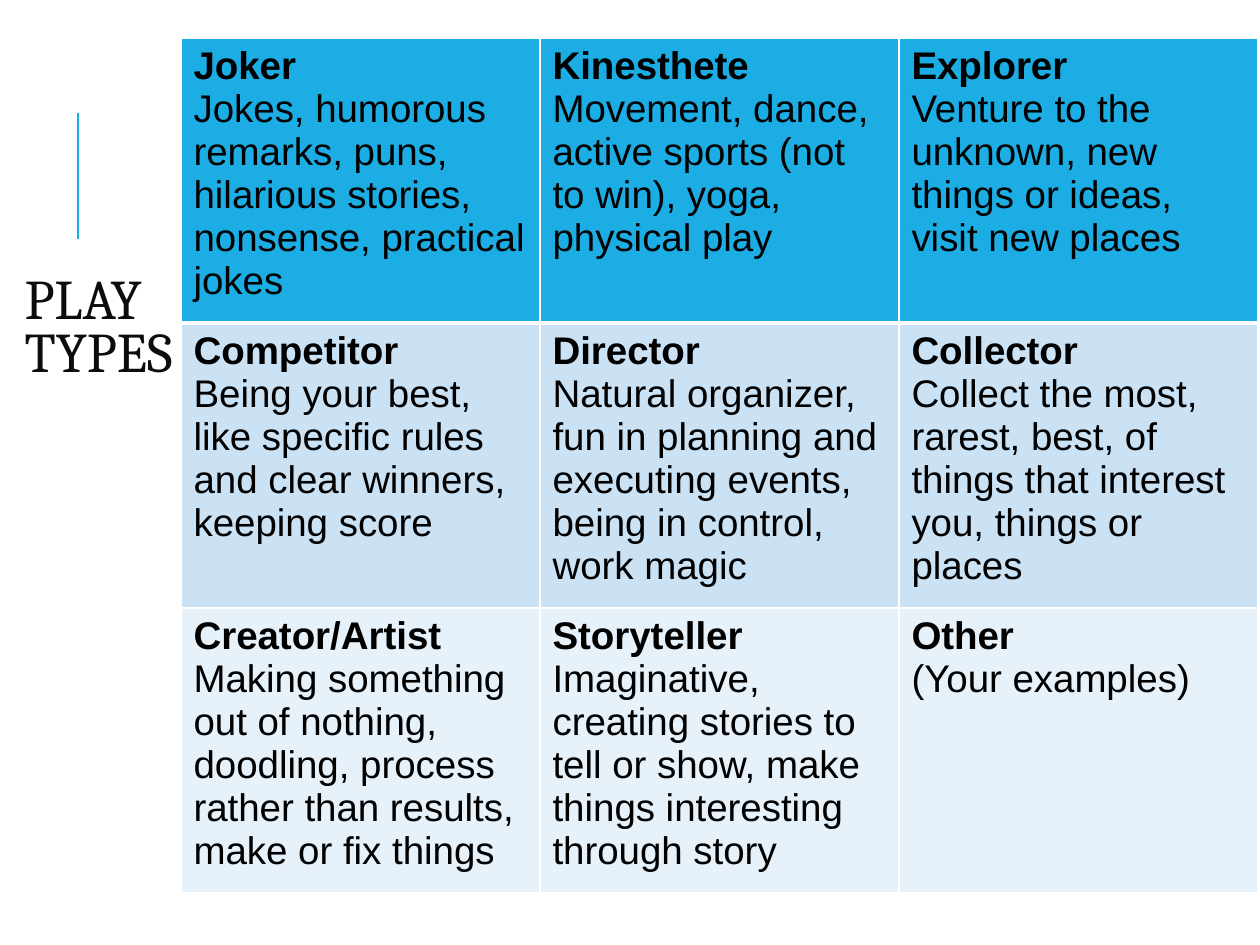
from lxml.etree import SubElement
from pptx import Presentation
from pptx.dml.color import RGBColor
from pptx.enum.shapes import MSO_CONNECTOR
from pptx.enum.text import MSO_ANCHOR, MSO_AUTO_SIZE, PP_ALIGN
from pptx.oxml.ns import qn
from pptx.util import Emu, Pt

TITLE = "PLAY\vTYPES"
PLAY_TYPES = [
    [
        ("Joker", "Jokes, humorous remarks, puns, hilarious stories, nonsense, practical jokes"),
        ("Kinesthete", "Movement, dance, active sports (not to win), yoga, physical play"),
        ("Explorer", "Venture to the unknown, new things or ideas, visit new places"),
    ],
    [
        ("Competitor", "Being your best, like specific rules and clear winners, keeping score"),
        ("Director", "Natural organizer, fun in planning and executing events, being in control, work magic"),
        ("Collector", "Collect the most, rarest, best, of things that interest you, things or places"),
    ],
    [
        ("Creator/Artist", "Making something out of nothing, doodling, process rather than results, make or fix things"),
        ("Storyteller", "Imaginative, creating stories to tell or show, make things interesting through story"),
        ("Other", "(Your examples)"),
    ],
]
ROW_FILLS = ["1CADE4", "CBE2F5", "E7F1FA"]
ACCENT, WHITE, BLACK, TITLE_COLOR = "1CADE4", "FFFFFF", "000000", "0C0C0C"

SLIDE_SIZE = (1260, 945)
TITLE_BOX = (12, 156, 265, 348)
ACCENT_LINE = (78, 239, 78, 113)
TABLE_LEFT, TABLE_TOP = 181, 38
COLUMN_WIDTH, ROW_HEIGHT = 359, 285
THIN, THICK = 1, 3


def px(value):
    return Emu(round(value * 914400 / 126))


def color(value):
    return RGBColor.from_string(value)


def format_font(font, size, name, font_color, bold=False):
    for attribute, value in {"size": Pt(size), "name": name, "bold": bold}.items():
        setattr(font, attribute, value)
    font.color.rgb = color(font_color)


def add_borders(cell, widths):
    properties = cell._tc.get_or_add_tcPr()
    for side, width in widths.items():
        border = SubElement(properties, qn(f"a:ln{side}"), w=str(Pt(width)))
        fill = SubElement(border, qn("a:solidFill"))
        SubElement(fill, qn("a:srgbClr"), val=WHITE)


def add_title(slide):
    title = slide.shapes.title
    for attribute, value in zip(("left", "top", "width", "height"), TITLE_BOX):
        setattr(title, attribute, px(value))
    frame = title.text_frame
    settings = {
        "text": TITLE,
        "word_wrap": True,
        "auto_size": MSO_AUTO_SIZE.NONE,
        "vertical_anchor": MSO_ANCHOR.MIDDLE,
    }
    for attribute, value in settings.items():
        setattr(frame, attribute, value)
    paragraph = frame.paragraphs[0]
    paragraph.alignment = PP_ALIGN.LEFT
    paragraph.line_spacing = 0.8
    for run in paragraph.runs:
        format_font(run.font, 32, "Cambria", TITLE_COLOR)


def add_accent_line(slide):
    line = slide.shapes.add_connector(MSO_CONNECTOR.STRAIGHT, *map(px, ACCENT_LINE))
    line.line.color.rgb = color(ACCENT)
    line.line.width = Pt(1.5)
    SubElement(line._element.spPr, qn("a:effectLst"))


def fill_cell(cell, texts, row_index):
    add_borders(cell, {
        "L": THIN,
        "R": THIN,
        "T": THICK if row_index == 1 else THIN,
        "B": THICK if row_index == 0 else THIN,
    })
    cell.fill.solid()
    cell.fill.fore_color.rgb = color(ROW_FILLS[row_index])
    cell.text = "\n".join(texts)
    for index, paragraph in enumerate(cell.text_frame.paragraphs):
        format_font(paragraph.runs[0].font, 22, "Arial", BLACK, bold=index == 0)


def add_play_table(slide):
    row_count, column_count = len(PLAY_TYPES), len(PLAY_TYPES[0])
    table = slide.shapes.add_table(
        row_count, column_count, px(TABLE_LEFT), px(TABLE_TOP),
        px(COLUMN_WIDTH * column_count), px(ROW_HEIGHT * row_count),
    ).table
    for column in table.columns:
        column.width = px(COLUMN_WIDTH)
    for row_index, row in enumerate(PLAY_TYPES):
        table.rows[row_index].height = px(ROW_HEIGHT)
        for column_index, texts in enumerate(row):
            fill_cell(table.cell(row_index, column_index), texts, row_index)


def main():
    presentation = Presentation()
    presentation.slide_width, presentation.slide_height = map(px, SLIDE_SIZE)
    slide = presentation.slides.add_slide(presentation.slide_layouts[5])
    add_title(slide)
    add_accent_line(slide)
    add_play_table(slide)
    presentation.save("out.pptx")


if __name__ == "__main__":
    main()
